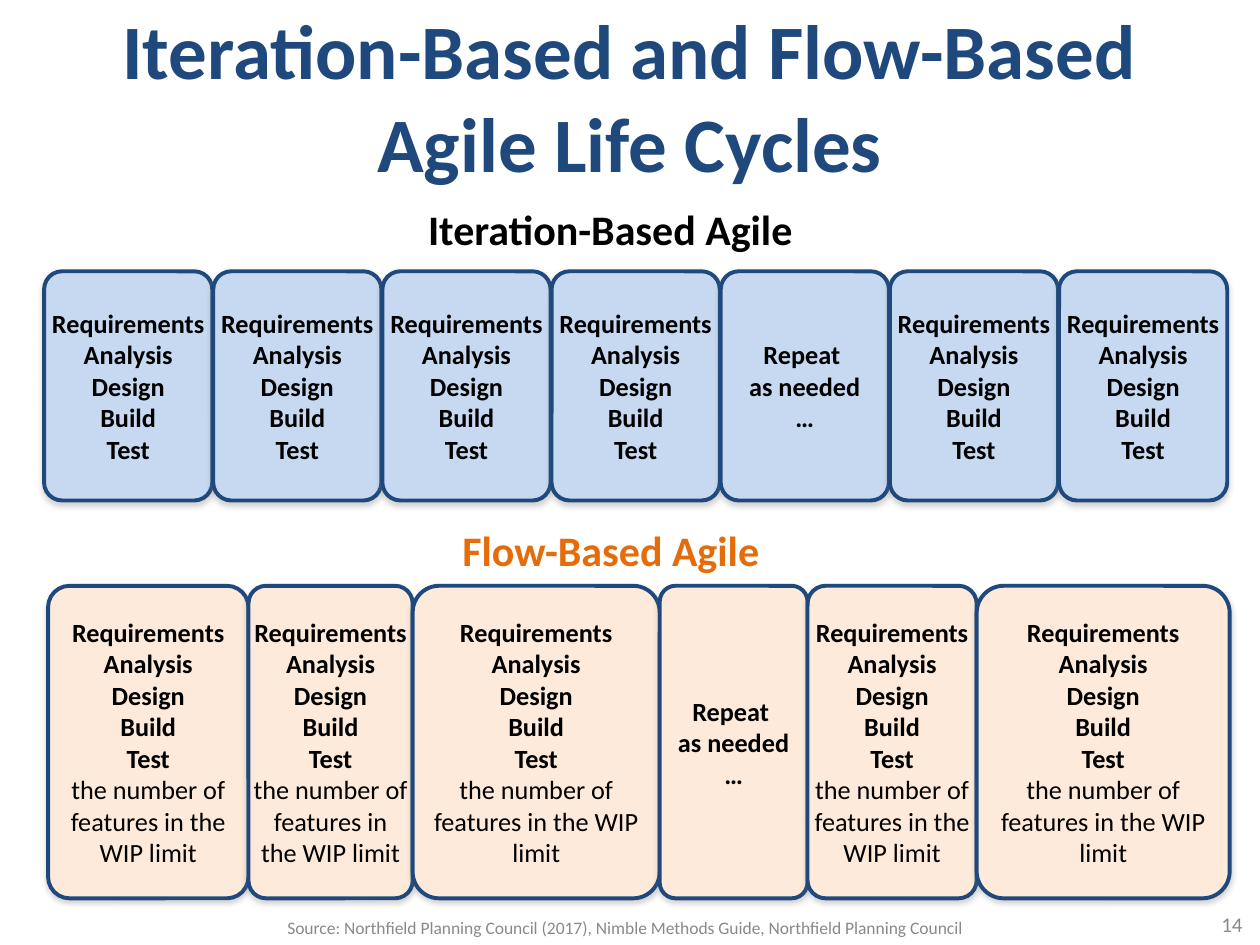
import copy
from dataclasses import dataclass

import lxml.etree
import pptx
import pptx.dml.color
import pptx.enum.shapes
import pptx.enum.text
import pptx.oxml
import pptx.oxml.ns
import pptx.util

Cm = pptx.util.Cm
ALIGN = pptx.enum.text.PP_ALIGN
ANCHOR = pptx.enum.text.MSO_ANCHOR


@dataclass(frozen=True)
class Theme:
    font: str = "Calibri"
    navy: str = "1F497D"
    blue: str = "C6D9F1"
    peach: str = "FDEADA"
    orange: str = "E46C0A"
    black: str = "000000"
    grey: str = "898989"
    title: int = 44
    heading: int = 24
    body: int = 15
    number: int = 12
    source: int = 10


T = Theme()
rgb = pptx.dml.color.RGBColor.from_string


def write(tf, text, size=T.body, color=T.black, bold=True, align=ALIGN.CENTER,
          anchor=ANCHOR.MIDDLE, wrap=True, plain=""):
    """Fill a frame: \\n starts a paragraph, \\v a line; plain is a last, non-bold paragraph."""
    tf.word_wrap = wrap
    tf.vertical_anchor = anchor
    paragraphs = [(t, bold) for t in text.split("\n")]
    if plain:
        paragraphs.append((plain, False))
    for i, (content, b) in enumerate(paragraphs):
        p = tf.add_paragraph() if i else tf.paragraphs[0]
        p.alignment = align
        for j, line in enumerate(content.split("\v")):
            if j:
                p.add_line_break()
                # The break keeps the type size of the run before it
                p._p[-1].append(copy.deepcopy(r._r.rPr))
            r = p.add_run()
            r.text = line
            r.font.name = T.font
            r.font.size = pptx.util.Pt(size)
            r.font.bold = b
            r.font.color.rgb = rgb(color)


prs = pptx.Presentation()
prs.slide_width, prs.slide_height = Cm(25.4), Cm(19.05)
s = prs.slides.add_slide(prs.slide_layouts[6])

# Title, slide number and source
for text, box, fmt in [
    ("Iteration-Based and Flow-Based Agile Life Cycles", (1.27, 0.33, 22.86, 3.18),
     dict(size=T.title, color=T.navy)),
    ("14", (19.38, 18.11, 5.92, 1.02),
     dict(size=T.number, color=T.grey, bold=False, align=ALIGN.RIGHT)),
    ("Source: Northfield Planning Council (2017), Nimble Methods Guide, "
     "Northfield Planning Council", (1.7, 18.34, 21.79, 0.71),
     dict(size=T.source, color=T.grey, bold=False)),
]:
    tb = s.shapes.add_textbox(*map(Cm, box))
    write(tb.text_frame, text, **fmt)

# Two life cycles: a heading over a row of rounded boxes
STEPS = "Requirements\nAnalysis\nDesign\nBuild\nTest"
REPEAT = "Repeat \vas needed\n…"
WIP = "the number of features in the WIP limit"
SHADOW = f"""<a:effectLst {pptx.oxml.ns.nsdecls("a")}>
  <a:outerShdw blurRad="40000" dist="23000" dir="5400000" rotWithShape="0">
    <a:srgbClr val="808080"><a:alpha val="35000"/></a:srgbClr>
  </a:outerShdw>
</a:effectLst>"""

cycles = [
    dict(name="Iteration-Based Agile", color=T.black, head=(8.33, 3.98, 7.95), fill=T.blue,
         left=0.89, top=5.47, height=4.62, widths=[3.39] * 7, gap=0.02, repeat=4, note=""),
    dict(name="Flow-Based Agile", color=T.orange, head=(9.04, 10.44, 6.55), fill=T.peach,
         left=0.97, top=11.81, height=6.3, widths=[4.04, 3.31, 4.98, 2.98, 3.41, 5.1],
         gap=0, repeat=3, note=WIP),
]
for c in cycles:
    x = c["left"]
    for i, w in enumerate(c["widths"]):
        sp = s.shapes.add_shape(pptx.enum.shapes.MSO_SHAPE.ROUNDED_RECTANGLE,
                                Cm(x), Cm(c["top"]), Cm(w), Cm(c["height"]))
        sp.adjustments[0] = 0.107
        sp.fill.solid()
        sp.fill.fore_color.rgb = rgb(c["fill"])
        sp.line.color.rgb = rgb(T.navy)
        sp.line.width = pptx.util.Pt(2.25)
        sp._element.spPr.append(pptx.oxml.parse_xml(SHADOW))
        tf = sp.text_frame
        tf.margin_left = tf.margin_right = tf.margin_top = tf.margin_bottom = 0
        if i == c["repeat"]:
            write(tf, REPEAT)
        else:
            write(tf, STEPS, plain=c["note"])
        x += w + c["gap"]

    left, top, width = c["head"]
    tb = s.shapes.add_textbox(Cm(left), Cm(top), Cm(width), Cm(1.27))
    write(tb.text_frame, c["name"], size=T.heading, color=c["color"],
          anchor=ANCHOR.TOP, wrap=False)
    tb.text_frame.auto_size = pptx.enum.text.MSO_AUTO_SIZE.SHAPE_TO_FIT_TEXT

prs.save("out.pptx")
